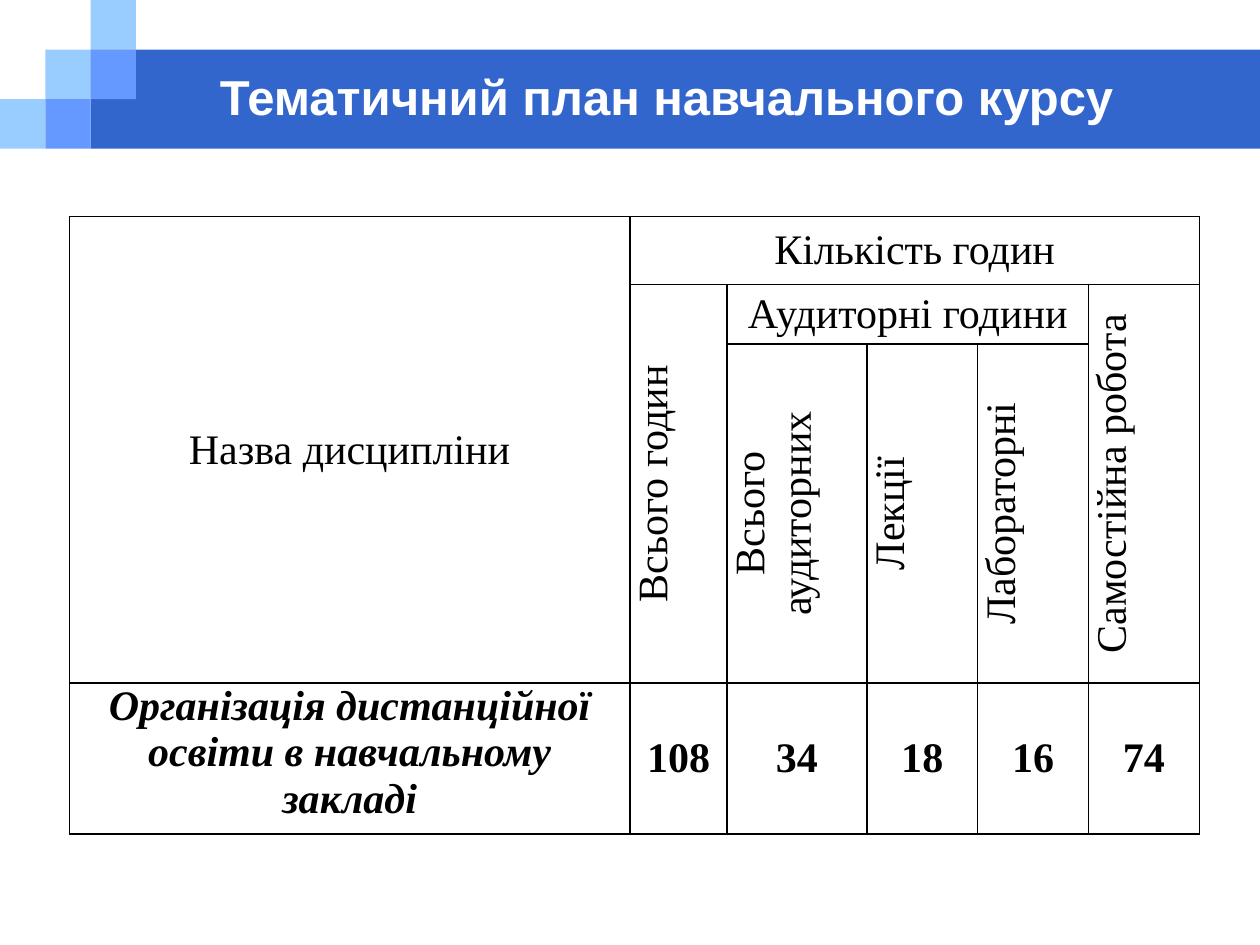
import pptx
import pptx.dml.color
import pptx.enum.shapes
import pptx.enum.text
import pptx.oxml
import pptx.oxml.ns
import pptx.util
from dataclasses import dataclass
from lxml import etree

Inches = pptx.util.Inches
MIDDLE = pptx.enum.text.MSO_ANCHOR.MIDDLE
TOP = pptx.enum.text.MSO_ANCHOR.TOP


@dataclass(frozen=True)
class Theme:
    band: str = "3366CC"
    light_tile: str = "99CCFF"
    mid_tile: str = "6699FF"
    title_color: str = "FFFFFF"
    ink: str = "000000"
    title_font: str = "Arial"
    table_font: str = "Times New Roman"
    title_size: int = 28
    table_size: int = 24
    border_width: int = 1


class SlideBuilder:
    """Draws on one slide; header pieces sit on a grid of small tiles."""

    WIDTH, HEIGHT = 10, 7.5
    TILE_WIDTH, TILE_HEIGHT = 0.36, 1.18 / 3

    def __init__(self, deck, theme):
        self.theme = theme
        self.page = deck.slides.add_slide(deck.slide_layouts[6])

    def style(self, paragraph, font, size, color, bold=False, italic=False):
        paragraph.alignment = pptx.enum.text.PP_ALIGN.CENTER
        paragraph.font.name = font
        paragraph.font.size = pptx.util.Pt(size)
        paragraph.font.bold = bold
        paragraph.font.italic = italic
        paragraph.font.color.rgb = pptx.dml.color.RGBColor.from_string(color)

    def block(self, column, row, columns, rows, color):
        box = self.page.shapes.add_shape(
            pptx.enum.shapes.MSO_SHAPE.RECTANGLE,
            Inches(column * self.TILE_WIDTH), Inches(row * self.TILE_HEIGHT),
            Inches(columns * self.TILE_WIDTH), Inches(rows * self.TILE_HEIGHT))
        box.shadow.inherit = False
        box.fill.solid()
        box.fill.fore_color.rgb = pptx.dml.color.RGBColor.from_string(color)
        box.line.fill.background()

    def title(self, text, left, top, width, height):
        box = self.page.shapes.add_textbox(*map(Inches, (left, top, width, height)))
        frame = box.text_frame
        frame.word_wrap = True
        frame.vertical_anchor = MIDDLE
        frame.text = text
        self.style(frame.paragraphs[0], self.theme.title_font,
                   self.theme.title_size, self.theme.title_color, bold=True)

    def table(self, left, top, height, widths, heights):
        frame = self.page.shapes.add_table(
            len(heights), len(widths), Inches(left), Inches(top),
            Inches(sum(widths)), Inches(height))
        table = frame.table
        table.first_row = table.horz_banding = False
        for column, width in zip(table.columns, widths):
            column.width = Inches(width)
        for row, row_height in zip(table.rows, heights):
            row.height = Inches(row_height)
        frame.height = Inches(height)
        for cell in table.iter_cells():
            self.border(cell)
            cell.fill.background()
        return table

    def border(self, cell):
        properties = cell._tc.get_or_add_tcPr()
        for side in ("lnL", "lnR", "lnT", "lnB"):
            line = etree.SubElement(properties, pptx.oxml.ns.qn(f"a:{side}"),
                                    w=str(pptx.util.Pt(self.theme.border_width)))
            fill = etree.SubElement(line, pptx.oxml.ns.qn("a:solidFill"))
            etree.SubElement(fill, pptx.oxml.ns.qn("a:srgbClr"), val=self.theme.ink)

    def cell(self, table, row, column, text, rows=1, columns=1,
             upright=False, anchor=MIDDLE, bold=False, italic=False):
        cell = table.cell(row, column)
        if rows * columns > 1:
            cell.merge(table.cell(row + rows - 1, column + columns - 1))
        cell.margin_left = cell.margin_right = Inches(0.07)
        cell.margin_top = cell.margin_bottom = 0
        cell.vertical_anchor = anchor
        if upright:
            cell._tc.get_or_add_tcPr().set("vert", "vert270")
        cell.text = text
        self.style(cell.text_frame.paragraphs[0], self.theme.table_font,
                   self.theme.table_size, self.theme.ink, bold, italic)


def main():
    deck = pptx.Presentation()
    deck.slide_width = Inches(SlideBuilder.WIDTH)
    deck.slide_height = Inches(SlideBuilder.HEIGHT)
    theme = Theme()
    slide = SlideBuilder(deck, theme)

    # Header band with a staircase of tiles
    slide.block(2, 1, SlideBuilder.WIDTH / SlideBuilder.TILE_WIDTH - 2, 2, theme.band)
    for column in range(3):
        slide.block(column, 2 - column, 1, 1, theme.light_tile)
    for column in (1, 2):
        slide.block(column, 3 - column, 1, 1, theme.mid_tile)
    slide.title("Тематичний план навчального курсу", 1.25, 0.5, 8.08, 0.53)

    # Table headings
    table = slide.table(0.55, 1.72, 4.71,
                        widths=[4.45, 0.77, 1.11, 0.88, 0.88, 0.88],
                        heights=[0.54, 0.47, 2.49, 0.95])
    slide.cell(table, 0, 0, "Назва дисципліни", rows=3)
    slide.cell(table, 0, 1, "Кількість годин", columns=5)
    slide.cell(table, 1, 2, "Аудиторні години", columns=3)
    for column, text in ((1, "Всього годин"), (5, "Самостійна робота")):
        slide.cell(table, 1, column, text, rows=2, upright=True)
    for column, text in enumerate(("Всього аудиторних", "Лекції", "Лабораторні"), 2):
        slide.cell(table, 2, column, text, upright=True)

    # Course row
    slide.cell(table, 3, 0, "Організація дистанційної освіти в навчальному закладі",
               anchor=TOP, bold=True, italic=True)
    for column, hours in enumerate((108, 34, 18, 16, 74), 1):
        slide.cell(table, 3, column, str(hours), bold=True)

    deck.save("out.pptx")


if __name__ == "__main__":
    main()
